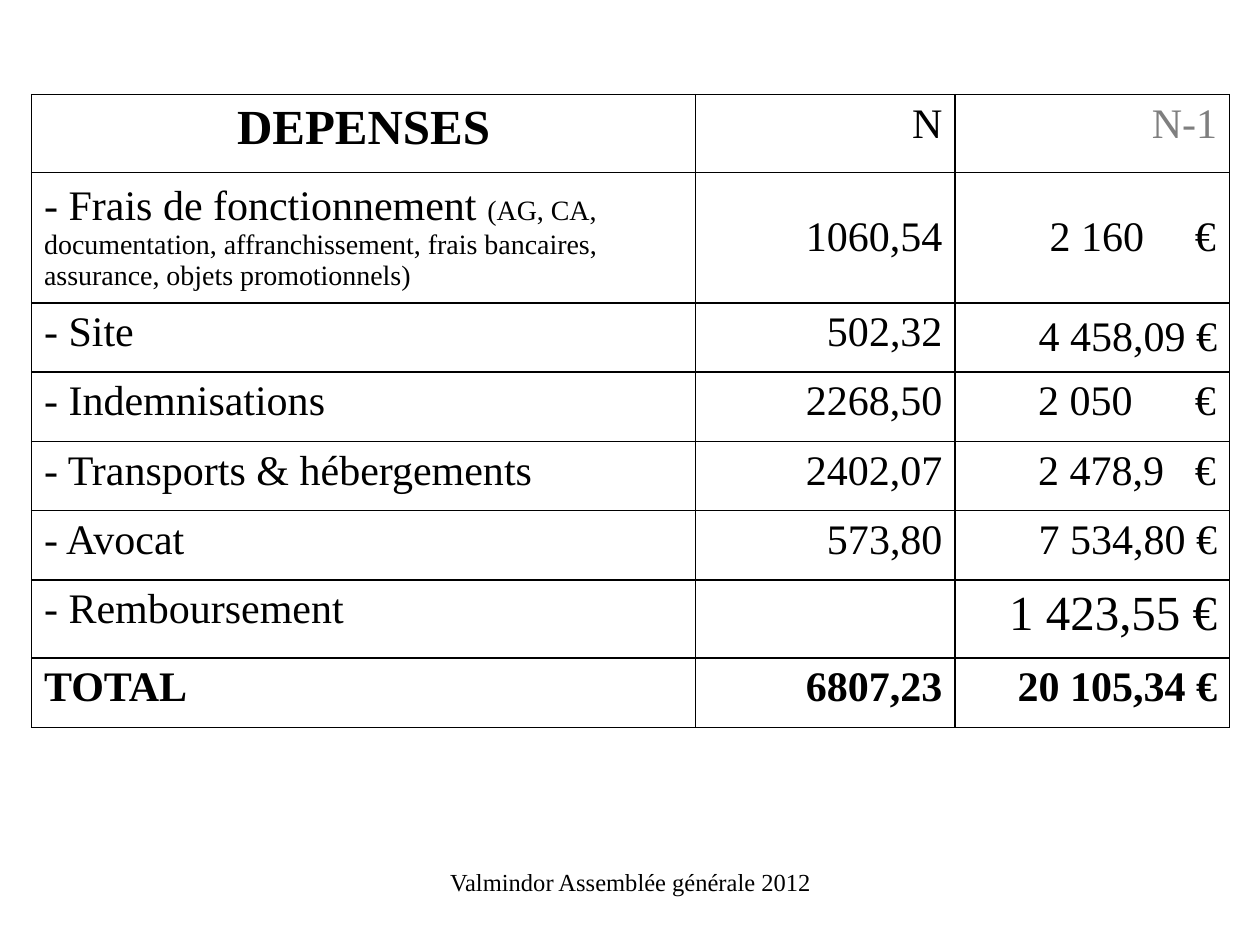
from dataclasses import dataclass

from lxml import etree
from pptx import Presentation
from pptx.dml.color import RGBColor
from pptx.enum.text import MSO_ANCHOR, PP_ALIGN
from pptx.oxml.ns import qn
from pptx.util import Inches, Pt

LEFT, CENTER, RIGHT = PP_ALIGN.LEFT, PP_ALIGN.CENTER, PP_ALIGN.RIGHT
TOP, MIDDLE = MSO_ANCHOR.TOP, MSO_ANCHOR.MIDDLE


@dataclass(frozen=True)
class Theme:
    """Hold the colours, font and type sizes."""
    font: str = "Times New Roman"
    ink: str = "000000"
    muted: str = "7F7F7F"
    paper: str = "FFFFFF"
    large: int = 28
    body: int = 24
    detail: int = 16
    footer: int = 14
    border: int = 1


THEME = Theme()
COLUMN_WIDTHS = (5.27, 2.06, 2.18)
ROW_HEIGHTS = (0.62, 1.03, 0.55, 0.55, 0.55, 0.55, 0.62, 0.55)
CELL_MARGIN = 0.1
EXPENSES = (
    ("DEPENSES", "N", "N-1"),
    ("- Frais de fonctionnement ", "1060,54", "2 160\t€"),
    ("- Site", "502,32", "4 458,09 €"),
    ("- Indemnisations", "2268,50", "2 050\t€"),
    ("- Transports & hébergements", "2402,07", "2 478,9\t€"),
    ("- Avocat", "573,80", "7 534,80 €"),
    ("- Remboursement", "", "1 423,55 €"),
    ("TOTAL", "6807,23", "20 105,34 €"),
)
OPERATING_DETAIL = (
    "(AG, CA, documentation, affranchissement, frais bancaires, "
    "assurance, objets promotionnels)"
)
AMOUNT_STARTS = {1: 0.75, 3: 0.66, 4: 0.66}
FORMATS = {
    (0, 0): {"size": THEME.large, "bold": True, "align": CENTER},
    (0, 2): {"color": THEME.muted},
    (6, 2): {"size": THEME.large},
    (7, 0): {"bold": True},
    (7, 1): {"bold": True},
    (7, 2): {"bold": True},
}
MIDDLE_CELLS = {(1, 0), (1, 1), (1, 2), (2, 2)}


def write_text(paragraph, text, size=THEME.body, bold=False, color=THEME.ink, align=LEFT):
    """Append a formatted run to a paragraph."""
    paragraph.alignment = align
    run = paragraph.add_run()
    run.text = text
    run.font.name = THEME.font
    run.font.size = Pt(size)
    run.font.bold = bold
    run.font.color.rgb = RGBColor.from_string(color)


def set_space_before(paragraph, percent):
    """Set the space before a paragraph as a share of its line."""
    properties = paragraph._p.get_or_add_pPr()
    spacing = etree.SubElement(properties, qn("a:spcBef"))
    etree.SubElement(spacing, qn("a:spcPct"), val=str(percent * 1000))


def set_right_tab(paragraph, position):
    """Add a right-aligned tab stop to a paragraph."""
    tabs = etree.SubElement(paragraph._p.get_or_add_pPr(), qn("a:tabLst"))
    etree.SubElement(tabs, qn("a:tab"), pos=str(Inches(position)), algn="r")


def style_cell(cell, anchor):
    """Give a cell its borders, plain fill and vertical anchor."""
    properties = cell._tc.get_or_add_tcPr()
    for side in ("lnL", "lnR", "lnT", "lnB"):
        line = etree.SubElement(properties, qn(f"a:{side}"), w=str(Pt(THEME.border)))
        fill = etree.SubElement(line, qn("a:solidFill"))
        etree.SubElement(fill, qn("a:srgbClr"), val=THEME.ink)
    cell.fill.background()
    cell.vertical_anchor = anchor


def fill_cell(cell, row, column, text):
    """Write one entry of the expense table."""
    style_cell(cell, MIDDLE if (row, column) in MIDDLE_CELLS else TOP)
    paragraph = cell.text_frame.paragraphs[0]
    if not text:
        paragraph.font.size = Pt(THEME.body)
        return
    set_space_before(paragraph, 20)
    text_format = {"align": RIGHT if column else LEFT, **FORMATS.get((row, column), {})}
    if "\t" in text:
        start = AMOUNT_STARTS[row]
        cell.margin_left = Inches(start)
        set_right_tab(paragraph, COLUMN_WIDTHS[column] - CELL_MARGIN - start - 0.01)
        text_format["align"] = LEFT
    write_text(paragraph, text, **text_format)
    if (row, column) == (1, 0):
        write_text(paragraph, OPERATING_DETAIL, size=THEME.detail)


def add_expense_table(slide):
    """Add the table of expenses for both years."""
    frame = slide.shapes.add_table(
        len(ROW_HEIGHTS), len(COLUMN_WIDTHS),
        Inches(0.25), Inches(0.75), Inches(9.5), Inches(5.04),
    )
    table = frame.table
    table.first_row = False
    table.horz_banding = False
    for column, width in zip(table.columns, COLUMN_WIDTHS):
        column.width = Inches(width)
    for row, height in zip(table.rows, ROW_HEIGHTS):
        row.height = Inches(height)
    for row, entries in enumerate(EXPENSES):
        for column, text in enumerate(entries):
            fill_cell(table.cell(row, column), row, column, text)


def add_footer(slide, text):
    """Add the centred footer line."""
    shape = slide.shapes.add_textbox(Inches(3.42), Inches(6.83), Inches(3.17), Inches(0.5))
    shape.text_frame.word_wrap = True
    write_text(shape.text_frame.paragraphs[0], text, size=THEME.footer, align=CENTER)


def main():
    """Build and save the presentation."""
    presentation = Presentation()
    presentation.slide_width = Inches(10)
    presentation.slide_height = Inches(7.5)
    slide = presentation.slides.add_slide(presentation.slide_layouts[6])
    slide.background.fill.solid()
    slide.background.fill.fore_color.rgb = RGBColor.from_string(THEME.paper)
    add_footer(slide, "Valmindor Assemblée générale 2012")
    add_expense_table(slide)
    presentation.save("out.pptx")


if __name__ == "__main__":
    main()
